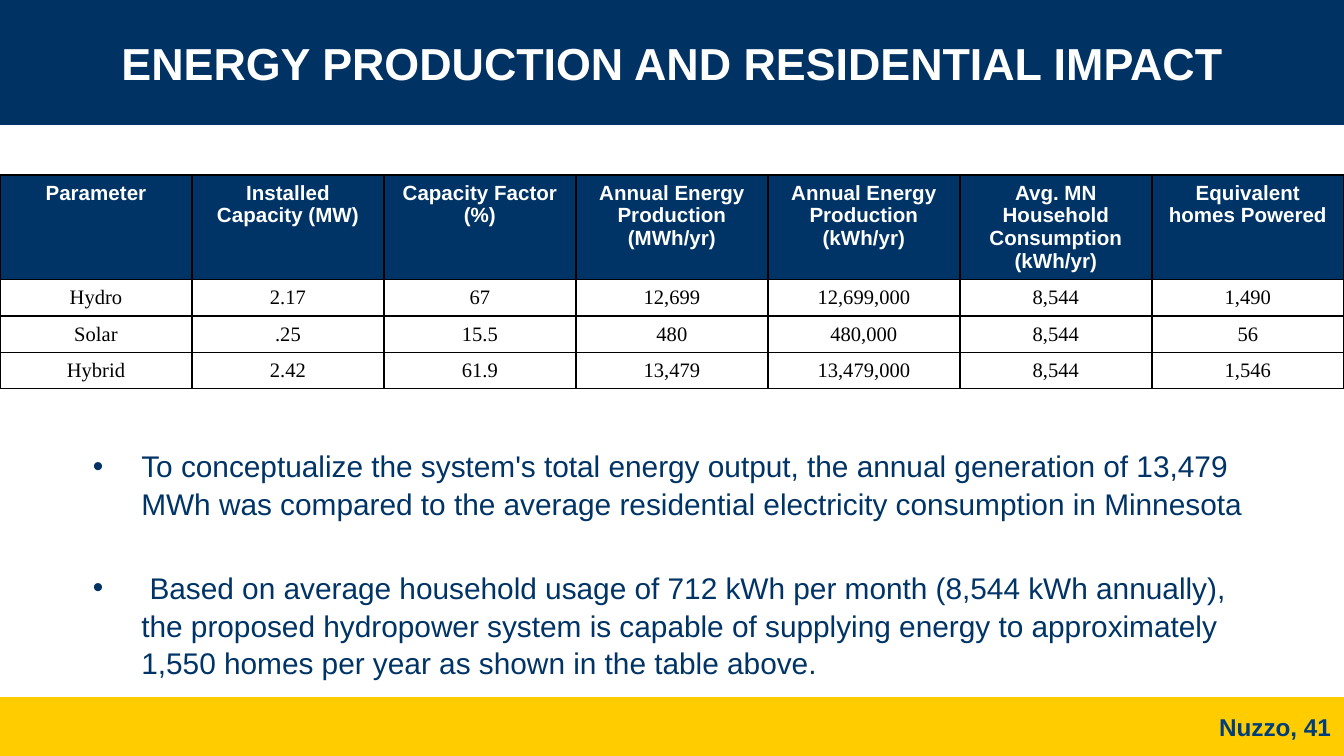
from lxml import etree
from pptx import Presentation
from pptx.dml.color import RGBColor
from pptx.enum.shapes import MSO_SHAPE
from pptx.enum.text import MSO_ANCHOR, MSO_AUTO_SIZE, PP_ALIGN
from pptx.oxml.ns import qn
from pptx.util import Pt

RECTANGLE = MSO_SHAPE.RECTANGLE
MIDDLE, TOP = MSO_ANCHOR.MIDDLE, MSO_ANCHOR.TOP
CENTER, LEFT, RIGHT = PP_ALIGN.CENTER, PP_ALIGN.LEFT, PP_ALIGN.RIGHT
NO_AUTOFIT = MSO_AUTO_SIZE.NONE

NAVY = RGBColor(0x00, 0x32, 0x64)
TEXT_NAVY = RGBColor(0x00, 0x34, 0x66)
FOOTER_BLUE = RGBColor(0x00, 0x3D, 0x7C)
GOLD = RGBColor(0xFF, 0xCC, 0x00)
WHITE = RGBColor(0xFF, 0xFF, 0xFF)
BLACK = RGBColor(0x00, 0x00, 0x00)

WIDTH, HEIGHT = 720, 405


def style(paragraph, size, color, align, bold=False, name="Arial"):
    paragraph.alignment = align
    font = paragraph.font
    font.name, font.size, font.bold = name, Pt(size), bold
    font.color.rgb = color


def place(shape, left, top, width, height):
    shape.left, shape.top = Pt(left), Pt(top)
    shape.width, shape.height = Pt(width), Pt(height)


prs = Presentation()
prs.slide_width, prs.slide_height = Pt(WIDTH), Pt(HEIGHT)
slide = prs.slides.add_slide(prs.slide_layouts[1])
title, body = slide.placeholders

# Header and footer bands, behind everything else
for top, height, color in [(0, 67, NAVY), (373.5, 31.5, GOLD)]:
    band = slide.shapes.add_shape(RECTANGLE, 0, Pt(top), Pt(WIDTH), Pt(height))
    band.shadow.inherit = False
    band.fill.solid()
    band.fill.fore_color.rgb = color
    band.line.fill.background()
    slide.shapes._spTree.insert(2, band._element)

# Title
place(title, 30, 0, 660, 67)
title.text_frame.text = "ENERGY PRODUCTION AND RESIDENTIAL IMPACT"
title.text_frame.vertical_anchor = MIDDLE
title.text_frame.auto_size = NO_AUTOFIT
style(title.text_frame.paragraphs[0], 24, WHITE, CENTER, bold=True)

# Bulleted findings
findings = [
    "To conceptualize the system's total energy output, the annual generation of 13,479 MWh "
    "was compared to the average residential electricity consumption in Minnesota",
    " Based on average household usage of 712 kWh per month (8,544 kWh annually), the proposed "
    "hydropower system is capable of supplying energy to approximately 1,550 homes per year "
    "as shown in the table above.",
]
place(body, 32.5, 235.5, 654.5, 144.5)
body.text_frame.text = "\n".join(findings)
body.text_frame.vertical_anchor = TOP
body.text_frame.auto_size = NO_AUTOFIT
for index, finding in enumerate(body.text_frame.paragraphs):
    props = finding._p.get_or_add_pPr()
    props.set("marL", str(Pt(36)))
    props.set("indent", str(Pt(-26)))
    bullet_color = etree.SubElement(props, qn("a:buClr"))
    etree.SubElement(bullet_color, qn("a:srgbClr"), val=str(NAVY))
    etree.SubElement(props, qn("a:buFont"), typeface="Arial")
    etree.SubElement(props, qn("a:buChar"), char="•")
    finding.line_spacing = 1.05
    finding.space_before = Pt(25 * index)
    style(finding, 16, TEXT_NAVY, LEFT)

# Energy table
rows = [
    ["Parameter", "Installed Capacity (MW)", "Capacity Factor (%)",
     "Annual Energy Production (MWh/yr)", "Annual Energy Production (kWh/yr)",
     "Avg. MN Household Consumption\n(kWh/yr)", "Equivalent homes Powered"],
    ["Hydro", "2.17", "67", "12,699", "12,699,000", "8,544", "1,490"],
    ["Solar", ".25", "15.5", "480", "480,000", "8,544", "56"],
    ["Hybrid", "2.42", "61.9", "13,479", "13,479,000", "8,544", "1,546"],
]
energy = slide.shapes.add_table(
    len(rows), len(rows[0]), 0, Pt(93.6), Pt(WIDTH), Pt(114.5)).table
energy.first_row = energy.horz_banding = False
for row_index, values in enumerate(rows):
    is_header = row_index == 0
    energy.rows[row_index].height = Pt(56 if is_header else 19.5)
    for column, value in enumerate(values):
        cell = energy.cell(row_index, column)
        cell.text = value
        for side in ("a:lnL", "a:lnR", "a:lnT", "a:lnB"):
            border = etree.SubElement(cell._tc.get_or_add_tcPr(), qn(side), w=str(Pt(1)))
            border_fill = etree.SubElement(border, qn("a:solidFill"))
            etree.SubElement(border_fill, qn("a:srgbClr"), val=str(BLACK))
        if is_header:
            cell.fill.solid()
            cell.fill.fore_color.rgb = TEXT_NAVY
        else:
            cell.fill.background()
        for paragraph in cell.text_frame.paragraphs:
            if is_header:
                style(paragraph, 11, WHITE, CENTER, bold=True)
            else:
                style(paragraph, 11, BLACK, CENTER, name="Times New Roman")

# Author and page number
footer = slide.shapes.add_textbox(Pt(633.5), Pt(374), Pt(86.5), Pt(31)).text_frame
footer.word_wrap = True
footer.vertical_anchor = MIDDLE
footer.text = "Nuzzo, 41"
style(footer.paragraphs[0], 13, FOOTER_BLUE, RIGHT, bold=True)

prs.save("out.pptx")
